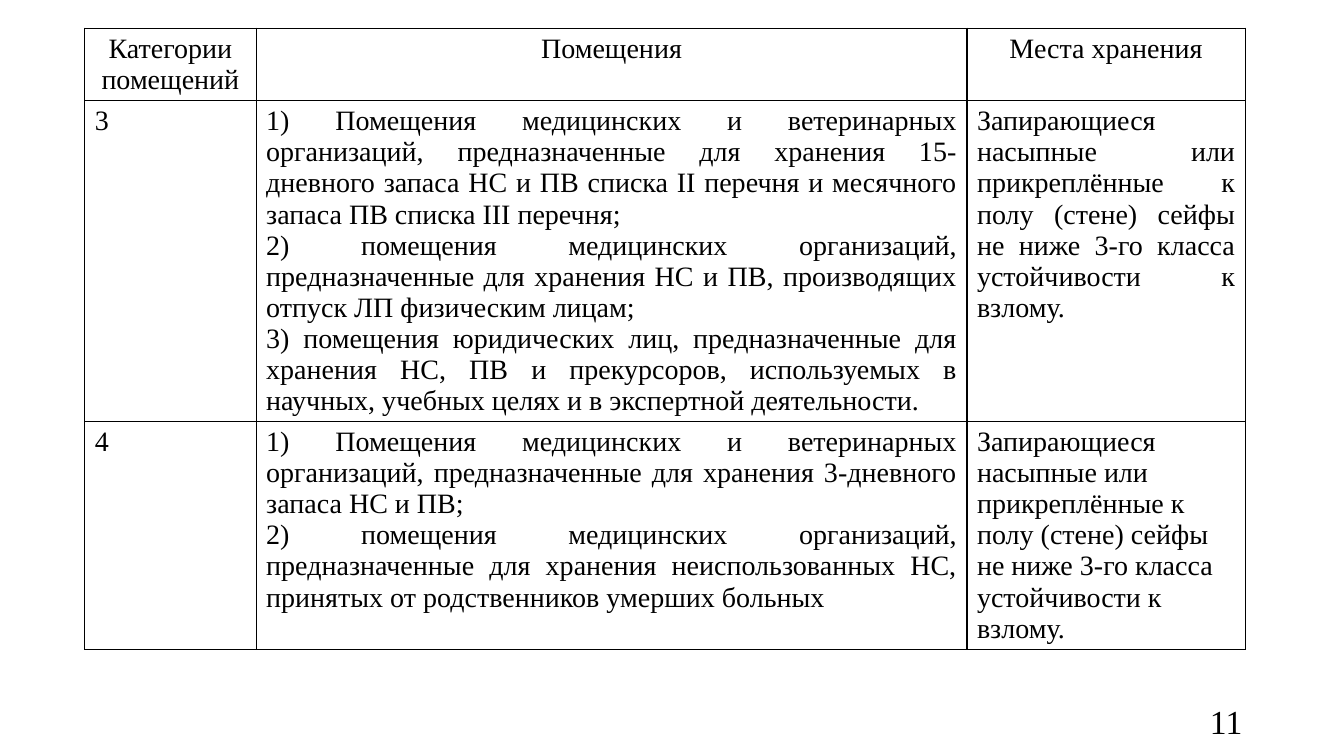
from lxml import etree
from pptx import Presentation
from pptx import util as u
from pptx.dml.color import RGBColor
from pptx.enum import text as t
from pptx.oxml import ns

FONT = "Times New Roman"
INK = "000000"
COLS = (1.7, 7.05, 2.76)
ROWS = (0.72, 3.18, 2.26)
LEFT, TOP = 0.84, 0.28
MID, FULL, END = t.PP_ALIGN.CENTER, t.PP_ALIGN.JUSTIFY, t.PP_ALIGN.RIGHT

HEAD = ("Категории помещений", "Помещения", "Места хранения")
SAFES = ("Запирающиеся насыпные или прикреплённые к полу (стене) сейфы "
         "не ниже 3-го класса устойчивости к взлому.")
ROOMS_3 = (
    " Помещения медицинских и ветеринарных организаций, предназначенные для "
    "хранения 15-дневного запаса НС и ПВ списка II перечня и месячного запаса "
    "ПВ списка III перечня;",
    " помещения медицинских организаций, предназначенные для хранения НС и ПВ, "
    "производящих отпуск ЛП физическим лицам;",
    " помещения юридических лиц, предназначенные для хранения НС, ПВ и "
    "прекурсоров, используемых в научных, учебных целях и в экспертной "
    "деятельности.",
)
ROOMS_4 = (
    " Помещения медицинских и ветеринарных организаций, предназначенные для "
    "хранения 3-дневного запаса НС и ПВ;",
    " помещения медицинских организаций, предназначенные для хранения "
    "неиспользованных НС, принятых от родственников умерших больных",
)


def color(code):
    return RGBColor.from_string(code)


def number(par):
    """Turn a paragraph into an item of a 1) 2) 3) list."""
    props = par._p.get_or_add_pPr()
    props.set("marL", "0")
    props.set("indent", "0")
    etree.SubElement(props, ns.qn("a:buFont"), typeface="+mj-lt")
    etree.SubElement(props, ns.qn("a:buAutoNum"), type="arabicParenR")


def write(frame, lines, size=20, align=None, listed=False):
    frame.word_wrap = True
    for i, line in enumerate(lines):
        par = frame.add_paragraph() if i else frame.paragraphs[0]
        if listed:
            number(par)
        par.alignment = align
        run = par.add_run()
        run.text = line
        run.font.name = FONT
        run.font.size = u.Pt(size)
        run.font.color.rgb = color(INK)


def border(cell, width=1):
    props = cell._tc.get_or_add_tcPr()
    for side in ("lnL", "lnR", "lnT", "lnB"):
        line = etree.SubElement(props, ns.qn("a:" + side), w=str(u.Pt(width)))
        fill = etree.SubElement(line, ns.qn("a:solidFill"))
        etree.SubElement(fill, ns.qn("a:srgbClr"), val=INK)


def grid(slide, rows):
    """Add the table; each cell is (lines, text format)."""
    box = (LEFT, TOP, sum(COLS), sum(ROWS))
    table = slide.shapes.add_table(
        len(ROWS), len(COLS), *map(u.Inches, box)).table
    table.first_row = table.horz_banding = False
    for col, width in zip(table.columns, COLS):
        col.width = u.Inches(width)
    for row, high, cells in zip(table.rows, ROWS, rows):
        row.height = u.Inches(high)
        for cell, (lines, style) in zip(row.cells, cells):
            write(cell.text_frame, lines, **style)
            border(cell)
            cell.fill.background()


def page(slide, label):
    box = slide.shapes.add_textbox(*map(u.Inches, (9.42, 6.95, 3, 0.4)))
    box.text_frame.vertical_anchor = t.MSO_ANCHOR.MIDDLE
    write(box.text_frame, [label], size=24, align=END)


def main():
    deck = Presentation()
    deck.slide_width, deck.slide_height = u.Inches(13.33), u.Inches(7.5)
    slide = deck.slides.add_slide(deck.slide_layouts[6])
    full = {"align": FULL}
    items = {"align": FULL, "listed": True}
    grid(slide, [
        [([name], {"align": MID}) for name in HEAD],
        [(["3"], full), (ROOMS_3, items), ([SAFES], full)],
        [(["4"], full), (ROOMS_4, items), ([SAFES], {})],
    ])
    page(slide, "11")
    deck.save("out.pptx")


if __name__ == "__main__":
    main()
